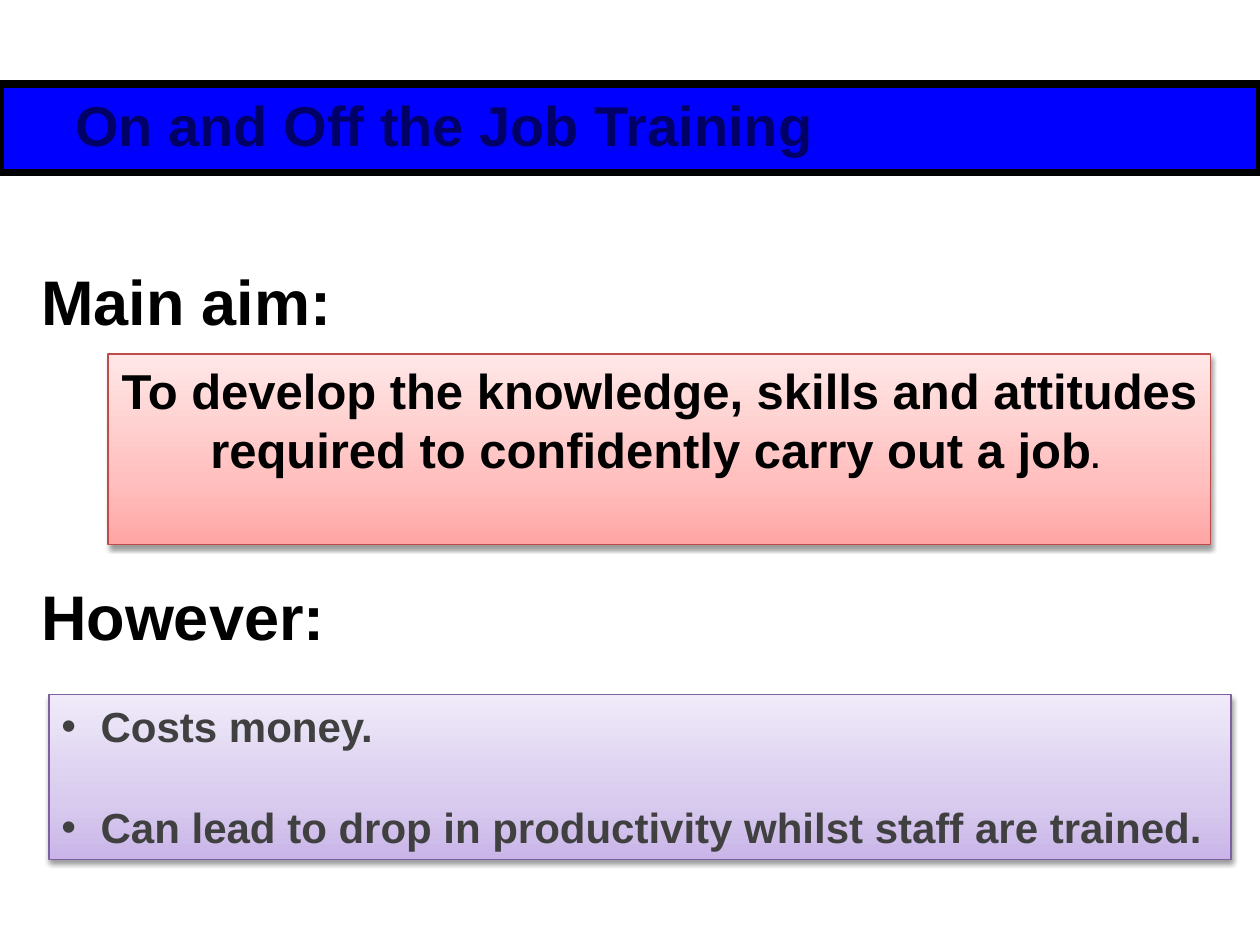
import pptx
import pptx.util
import pptx.dml.color
import pptx.enum.shapes
import pptx.enum.text
import pptx.oxml
import pptx.oxml.ns
from pptx.util import Cm, Pt

NS = pptx.oxml.ns.nsdecls("a")
TITLE = "On and Off the Job Training"
HEADINGS = [("Main aim:", 5.16), ("However:", 11.51)]
AIM = [("To develop the knowledge, skills and attitudes required "
        "to confidently carry out a job", 28), (". ", 18)]
DRAWBACKS = ["Costs money.",
             "Can lead to drop in productivity whilst staff are trained."]
RED = [(0, "FFA6A5"), (35, "FFC0BF"), (100, "FFE7E7")]
PURPLE = [(0, "C9B5E8"), (35, "D8CBEE"), (100, "F0EAF9")]


def rgb(value):
    return pptx.dml.color.RGBColor.from_string(value)


def xml(text):
    return pptx.oxml.parse_xml(text)


def shadow(blur, dist, angle, alpha):
    return xml(f'<a:outerShdw {NS} blurRad="{Pt(blur)}" dist="{Pt(dist)}" '
               f'dir="{angle * 60000}" rotWithShape="0"><a:srgbClr val="000000">'
               f'<a:alpha val="{alpha * 1000}"/></a:srgbClr></a:outerShdw>')


def style(r, size, color):
    r.font.name = "Arial"
    r.font.size = Pt(size)
    r.font.bold = True
    r.font.color.rgb = rgb(color)


def add_box(s, left, top, width, height, line, weight):
    sp = s.shapes.add_shape(pptx.enum.shapes.MSO_SHAPE.RECTANGLE,
                            Cm(left), Cm(top), Cm(width), Cm(height))
    sp.shadow.inherit = False
    sp.line.color.rgb = rgb(line)
    sp.line.width = Pt(weight)
    sp.text_frame.word_wrap = True
    sp.text_frame.vertical_anchor = pptx.enum.text.MSO_ANCHOR.TOP
    return sp


def add_gradient_box(s, left, top, width, height, line, stops):
    sp = add_box(s, left, top, width, height, line, 0.75)
    sp.fill.gradient()
    spPr = sp.element.spPr
    grad = spPr.find(pptx.oxml.ns.qn("a:gradFill"))
    gs = "".join(f'<a:gs pos="{pos * 1000}"><a:srgbClr val="{color}"/></a:gs>'
                 for pos, color in stops)
    spPr.replace(grad, xml(f'<a:gradFill {NS} rotWithShape="1"><a:gsLst>{gs}</a:gsLst>'
                           '<a:lin ang="16200000" scaled="0"/></a:gradFill>'))
    spPr.find(pptx.oxml.ns.qn("a:effectLst")).append(shadow(3.1, 1.6, 90, 38))
    return sp


def add_heading(s, text, top):
    sp = s.shapes.add_textbox(Cm(0.58), Cm(top), Cm(9.1), Cm(1.78))
    tf = sp.text_frame
    tf.word_wrap = True
    tf.text = text
    r = tf.paragraphs[0].runs[0]
    style(r, 36, "000000")
    effects = xml(f"<a:effectLst {NS}/>")
    effects.append(shadow(3, 3, 45, 100))
    fill = r.font._element.find(pptx.oxml.ns.qn("a:solidFill"))
    fill.addnext(effects)


def main():
    prs = pptx.Presentation()
    prs.slide_width, prs.slide_height = Cm(25.4), Cm(19.05)
    s = prs.slides.add_slide(prs.slide_layouts[6])
    align = pptx.enum.text.PP_ALIGN

    sp = add_box(s, 0, 1.7, 25.4, 1.78, "000000", 4.5)
    sp.fill.solid()
    sp.fill.fore_color.rgb = rgb("0000FF")
    tf = sp.text_frame
    tf.margin_left = Cm(1.52)
    tf.text = TITLE
    tf.paragraphs[0].alignment = align.LEFT
    style(tf.paragraphs[0].runs[0], 32, "000066")

    for text, top in HEADINGS:
        add_heading(s, text, top)

    sp = add_gradient_box(s, 2.18, 7.14, 22.23, 3.84, "BF4C48", RED)
    p = sp.text_frame.paragraphs[0]
    p.alignment = align.CENTER
    for text, size in AIM:
        r = p.add_run()
        r.text = text
        style(r, size, "000000")

    sp = add_gradient_box(s, 0.99, 14, 23.83, 3.33, "7D60A0", PURPLE)
    tf = sp.text_frame
    tf.text = "\n".join(DRAWBACKS)
    for i, p in enumerate(tf.paragraphs):
        p.alignment = align.LEFT
        p.space_before = Pt(29 if i else 0)
        style(p.runs[0], 24, "404040")
        pPr = p._p.get_or_add_pPr()
        pPr.set("marL", str(Cm(0.79)))
        pPr.set("indent", str(-Cm(0.79)))
        pPr.append(xml(f'<a:buFont {NS} typeface="Arial"/>'))
        pPr.append(xml(f'<a:buChar {NS} char="•"/>'))

    prs.save("out.pptx")


if __name__ == "__main__":
    main()
